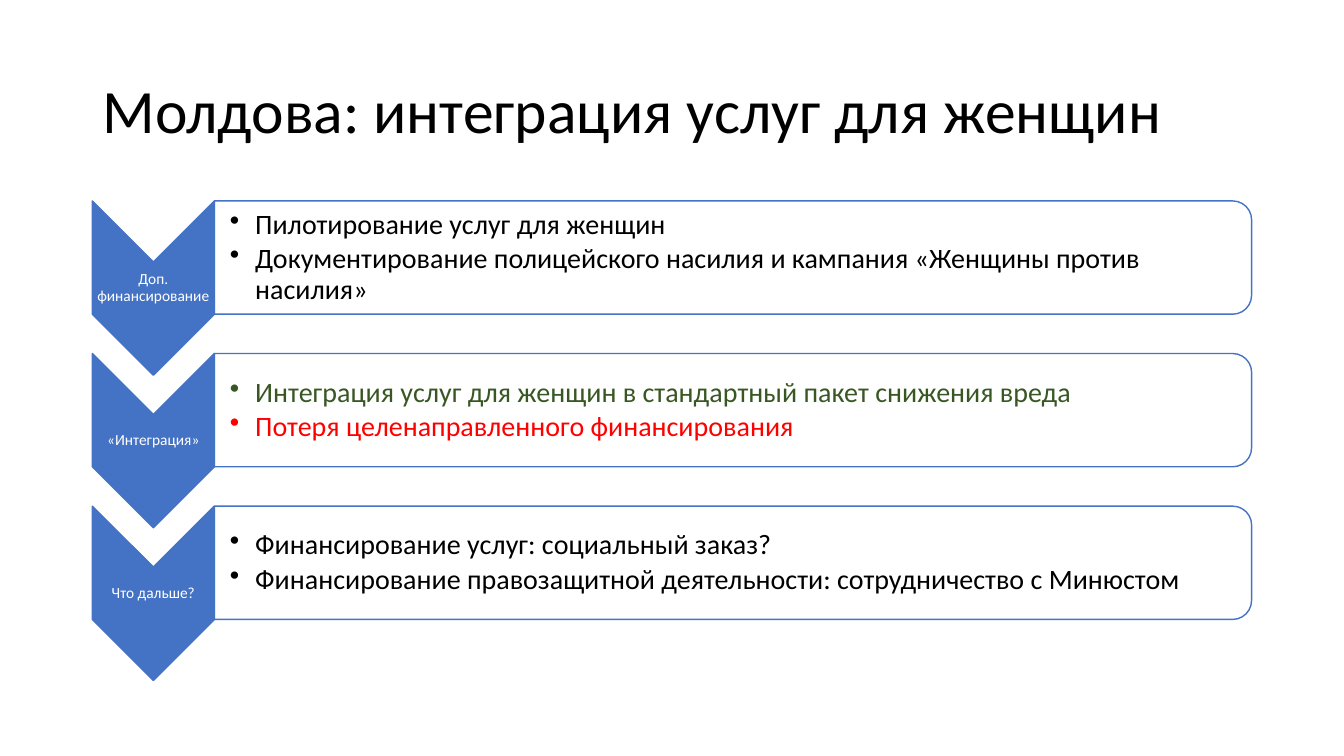
"""Build a slide with three chevron steps and their bullet panels."""
from dataclasses import dataclass

from lxml.etree import SubElement
from pptx import Presentation
from pptx.dml.color import RGBColor
from pptx.enum.shapes import MSO_SHAPE as Shape
from pptx.enum.text import MSO_ANCHOR as Anchor, MSO_AUTO_SIZE as AutoSize, PP_ALIGN as Align
from pptx.oxml.ns import qn
from pptx.util import Pt

TITLE = "Молдова: интеграция услуг для женщин"
STEPS = [
    ("Доп. финансирование", [
        ("Пилотирование услуг для женщин", "black"),
        ("Документирование полицейского насилия и кампания «Женщины против насилия»", "black"),
    ]),
    ("«Интеграция»", [
        ("Интеграция услуг для женщин в стандартный пакет снижения вреда", "green"),
        ("Потеря целенаправленного финансирования", "red"),
    ]),
    ("Что дальше?", [
        ("Финансирование услуг: социальный заказ?", "black"),
        ("Финансирование правозащитной деятельности: сотрудничество с Минюстом", "black"),
    ]),
]


@dataclass(frozen=True)
class Theme:
    """Colours, font and type sizes."""
    black: str = "000000"
    white: str = "FFFFFF"
    blue: str = "4472C4"
    green: str = "385723"
    red: str = "FF0000"
    font: str = "Calibri"
    title: int = 44
    label: int = 11
    bullet: int = 20


THEME = Theme()
LEFT, FIRST_Y, PITCH = 66, 184, 109
CHEVRON_W, CHEVRON_H = 87.1, 124.5
PANEL_X, PANEL_W, PANEL_H = LEFT + CHEVRON_W, 740.9, 80.9
LABEL_H, BULLETS_W, BULLETS_H = 37.4, 737.3, 72.7
BULLET_INDENT = 18


def rgb(name):
    """Return a theme colour by name."""
    return RGBColor.from_string(getattr(THEME, name))


def style(p, size, color):
    """Format a paragraph and its runs."""
    p.line_spacing = 0.9
    for r in p.runs:
        r.font.name = THEME.font
        r.font.size = Pt(size)
        r.font.color.rgb = rgb(color)


def add_rotated(s, kind, cx, cy, width, height, fill):
    """Add a shape turned a quarter, given its visible centre and size."""
    sp = s.shapes.add_shape(kind, Pt(cx - height / 2), Pt(cy - width / 2), Pt(height), Pt(width))
    sp.rotation = 90
    sp.shadow.inherit = False
    sp.fill.solid()
    sp.fill.fore_color.rgb = rgb(fill)
    sp.line.color.rgb = rgb("blue")
    sp.line.width = Pt(1)
    return sp


def add_text(s, x, cy, width, height, lines, inset=0.9):
    """Add a text box centred on cy and return its paragraphs."""
    tf = s.shapes.add_textbox(Pt(x), Pt(cy - height / 2), Pt(width), Pt(height)).text_frame
    tf.word_wrap = True
    tf.vertical_anchor = Anchor.MIDDLE
    tf.margin_left = Pt(inset)
    tf.margin_top = tf.margin_right = tf.margin_bottom = Pt(0.9)
    tf.text = "\n".join(lines)
    return tf.paragraphs


def add_bullet(p):
    """Give a paragraph a hanging bullet."""
    pPr = p._p.get_or_add_pPr()
    pPr.set("marL", str(Pt(BULLET_INDENT)))
    pPr.set("indent", str(-Pt(BULLET_INDENT)))
    SubElement(pPr, qn("a:buChar"), char="•")


def add_title(s):
    """Place and format the title."""
    sp = s.shapes.title
    sp.left, sp.top, sp.width, sp.height = Pt(LEFT), Pt(28.8), Pt(828), Pt(104.4)
    tf = sp.text_frame
    tf.text = TITLE
    tf.auto_size = AutoSize.NONE
    tf.vertical_anchor = Anchor.MIDDLE
    p = tf.paragraphs[0]
    p.alignment = Align.LEFT
    style(p, THEME.title, "black")


def add_step(s, cy, label, bullets):
    """Add one chevron with its label and bullet panel."""
    chevron_y = cy + (CHEVRON_H - PANEL_H) / 2
    add_rotated(s, Shape.CHEVRON, LEFT + CHEVRON_W / 2, chevron_y, CHEVRON_W, CHEVRON_H, "blue")
    p = add_text(s, LEFT, chevron_y, CHEVRON_W, LABEL_H, [label])[0]
    p.alignment = Align.CENTER
    p.space_after = Pt(4)
    style(p, THEME.label, "white")

    panel = add_rotated(s, Shape.ROUND_2_SAME_RECTANGLE, PANEL_X + PANEL_W / 2, cy,
                        PANEL_W, PANEL_H, "white")
    color = panel.fill._xPr.find(qn("a:solidFill"))[0]
    SubElement(color, qn("a:alpha"), val="90000")
    lines = [text for text, _ in bullets]
    paragraphs = add_text(s, PANEL_X, cy, BULLETS_W, BULLETS_H, lines, inset=11.2)
    for p, (_, name) in zip(paragraphs, bullets):
        p.space_after = Pt(3)
        style(p, THEME.bullet, name)
        add_bullet(p)


def main():
    """Build and save the slide."""
    prs = Presentation()
    prs.slide_width, prs.slide_height = Pt(960), Pt(540)
    s = prs.slides.add_slide(prs.slide_layouts[5])
    add_title(s)
    for i, (label, bullets) in enumerate(STEPS):
        add_step(s, FIRST_Y + i * PITCH, label, bullets)
    prs.save("out.pptx")


if __name__ == "__main__":
    main()
